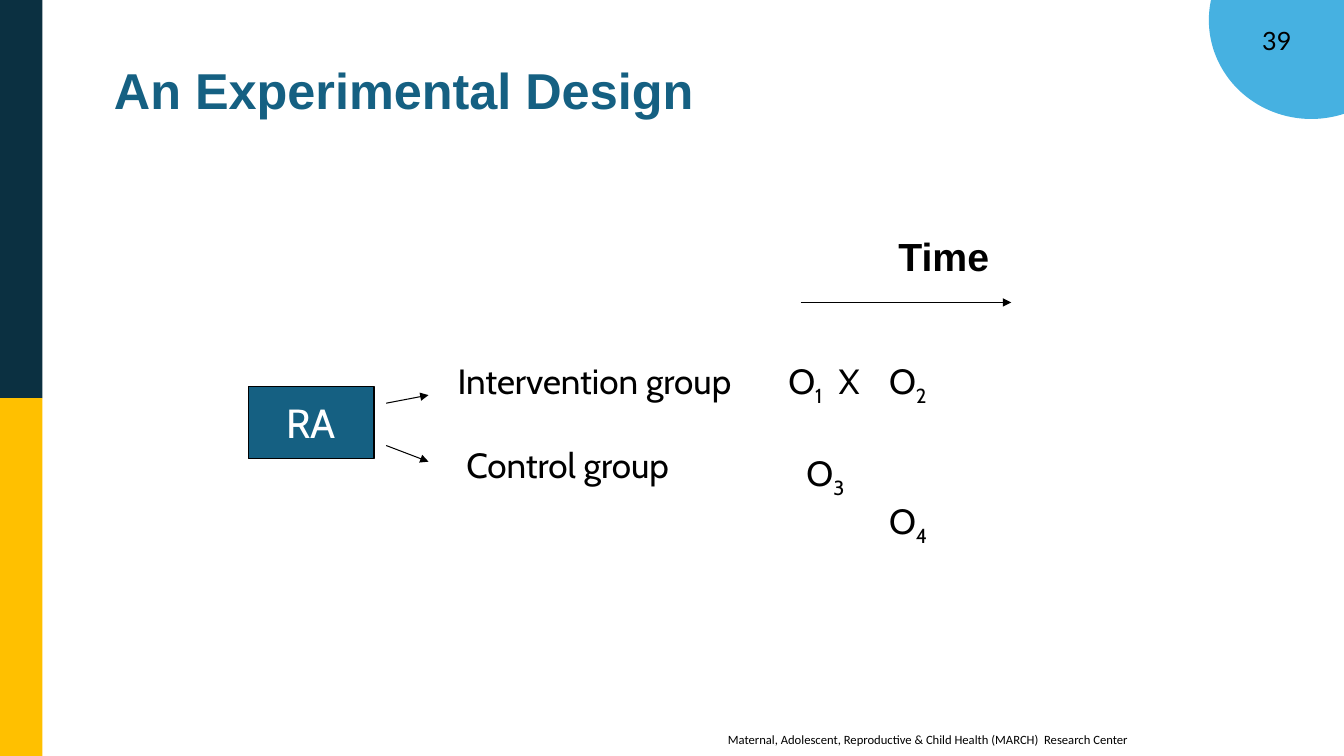
import pptx
import pptx.util
import pptx.dml.color
import pptx.enum.shapes
import pptx.enum.text
import pptx.oxml.ns
import lxml.etree

Inches = pptx.util.Inches
Align = pptx.enum.text.PP_ALIGN
Anchor = pptx.enum.text.MSO_ANCHOR
Shape = pptx.enum.shapes.MSO_SHAPE
RGBColor = pptx.dml.color.RGBColor

BLACK = RGBColor(0, 0, 0)
WHITE = RGBColor(255, 255, 255)
TEAL = RGBColor(0x15, 0x60, 0x82)
SKY = RGBColor(0x46, 0xB1, 0xE1)
NAVY = RGBColor(0x0B, 0x30, 0x41)
GOLD = RGBColor(0xFF, 0xC0, 0x00)

TITLE = {"name": "Arial", "size": 36, "bold": True, "color": TEAL}
TIME = {"name": "Arial", "size": 28, "bold": True, "color": BLACK}
LABEL = {"name": "Cabin", "size": 25, "color": BLACK}
BADGE = {"name": "Cabin", "size": 29, "color": WHITE}
NUMBER = {"name": "Lato", "size": 18, "color": BLACK}
FOOTER = {"name": "Calibri", "size": 9, "color": BLACK}


def write(para, text, style, align=Align.LEFT):
    """Write text; each part after an underscore starts with a subscript digit."""
    para.alignment = align
    pieces = text.split("_")
    parts = [(pieces[0], False)]
    for piece in pieces[1:]:
        parts += [(piece[0], True), (piece[1:], False)]
    for words, lowered in parts:
        if not words:
            continue
        span = para.add_run()
        span.text = words
        for key, value in style.items():
            if key == "color":
                span.font.color.rgb = value
            elif key == "size":
                span.font.size = pptx.util.Pt(value)
            else:
                setattr(span.font, key, value)
        if lowered:
            span.font._element.set("baseline", "-25000")


def add_block(preset, place, fill, line=None, width=0.75):
    block = page.shapes.add_shape(preset, *map(Inches, place))
    block.shadow.inherit = False
    block.fill.solid()
    block.fill.fore_color.rgb = fill
    if line is None:
        block.line.fill.background()
    else:
        block.line.color.rgb = line
        block.line.width = pptx.util.Pt(width)
    return block


deck = pptx.Presentation()
deck.slide_width, deck.slide_height = Inches(13.33), Inches(7.5)
page = deck.slides.add_slide(deck.slide_layouts[5])

# Corner circle and side bands
add_block(Shape.OVAL, (12, -0.77, 2.01, 1.94), SKY, SKY, 1.5)
add_block(Shape.RECTANGLE, (0, 0, 0.42, 3.95), NAVY)
add_block(Shape.RECTANGLE, (0, 3.95, 0.42, 3.55), GOLD)

# Title
title = page.shapes.title
title.left, title.top, title.width, title.height = map(Inches, (1.03, 0.3, 10.57, 1.25))
title.text_frame.vertical_anchor = Anchor.MIDDLE
title.text_frame.paragraphs[0].line_spacing = 0.9
write(title.text_frame.paragraphs[0], "An Experimental Design", TITLE)

# Random assignment box
assignment = add_block(Shape.RECTANGLE, (2.46, 3.83, 1.25, 0.72), TEAL, BLACK)
assignment.text_frame.vertical_anchor = Anchor.MIDDLE
write(assignment.text_frame.paragraphs[0], "RA", BADGE, Align.CENTER)

# Arrows to both groups and along time
for ends in [(3.83, 4, 4.25, 3.92), (3.83, 4.42, 4.25, 4.58), (7.94, 3, 10.03, 3)]:
    arrow = page.shapes.add_connector(
        pptx.enum.shapes.MSO_CONNECTOR.STRAIGHT, *map(Inches, ends))
    arrow.line.color.rgb = BLACK
    arrow.line.width = pptx.util.Pt(0.75)
    head = lxml.etree.SubElement(arrow.line._get_or_add_ln(), pptx.oxml.ns.qn("a:tailEnd"))
    head.set("type", "triangle")
    lxml.etree.SubElement(arrow._element.spPr, pptx.oxml.ns.qn("a:effectLst"))

# Labels, observations, page number and footer; each line has its left indent
labels = [
    ((12.42, 0.2, 0.6, 0.4), [("39", 0)], NUMBER, Align.LEFT),
    ((7.12, 7.21, 4.49, 0.25),
     [("Maternal, Adolescent, Reproductive & Child Health (MARCH)  Research Center", 0)],
     FOOTER, Align.LEFT),
    ((8.6, 2.26, 1.52, 0.57), [("Time", 0)], TIME, Align.CENTER),
    ((4.34, 3.52, 3.11, 0.52), [("Intervention group", 0)], LABEL, Align.CENTER),
    ((4.41, 4.35, 2.44, 0.52), [("Control group", 0)], LABEL, Align.CENTER),
    ((7.72, 3.52, 2.58, 0.52), [("O_1\tX\tO_2", 0)], LABEL, Align.LEFT),
    ((7.72, 4.43, 2.58, 1), [("O_3", 0.18), ("O_4", 1)], LABEL, Align.LEFT),
]
for place, lines, style, align in labels:
    box = page.shapes.add_textbox(*map(Inches, place))
    frame = box.text_frame
    frame.word_wrap = True
    for index, (text, indent) in enumerate(lines):
        para = frame.add_paragraph() if index else frame.paragraphs[0]
        if indent:
            para._p.get_or_add_pPr().set("marL", str(Inches(indent)))
        write(para, text, style, align)

deck.save("out.pptx")
